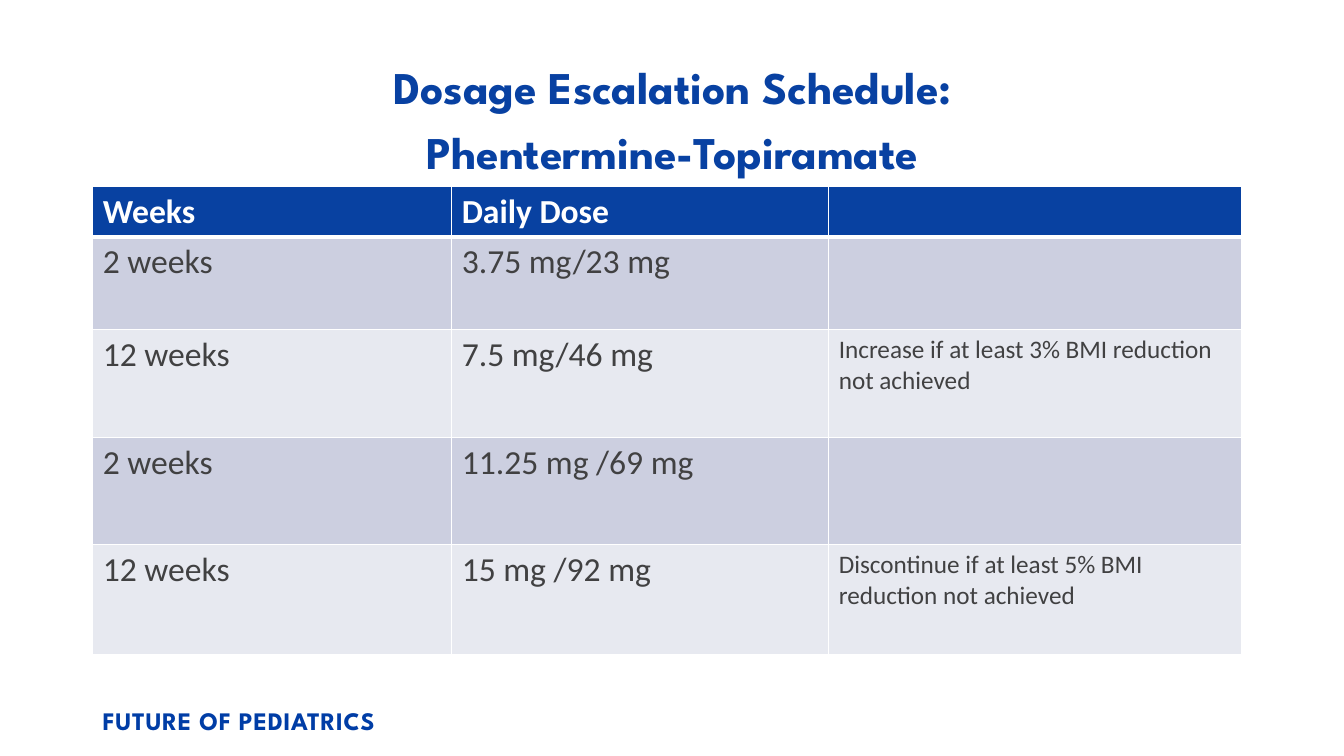
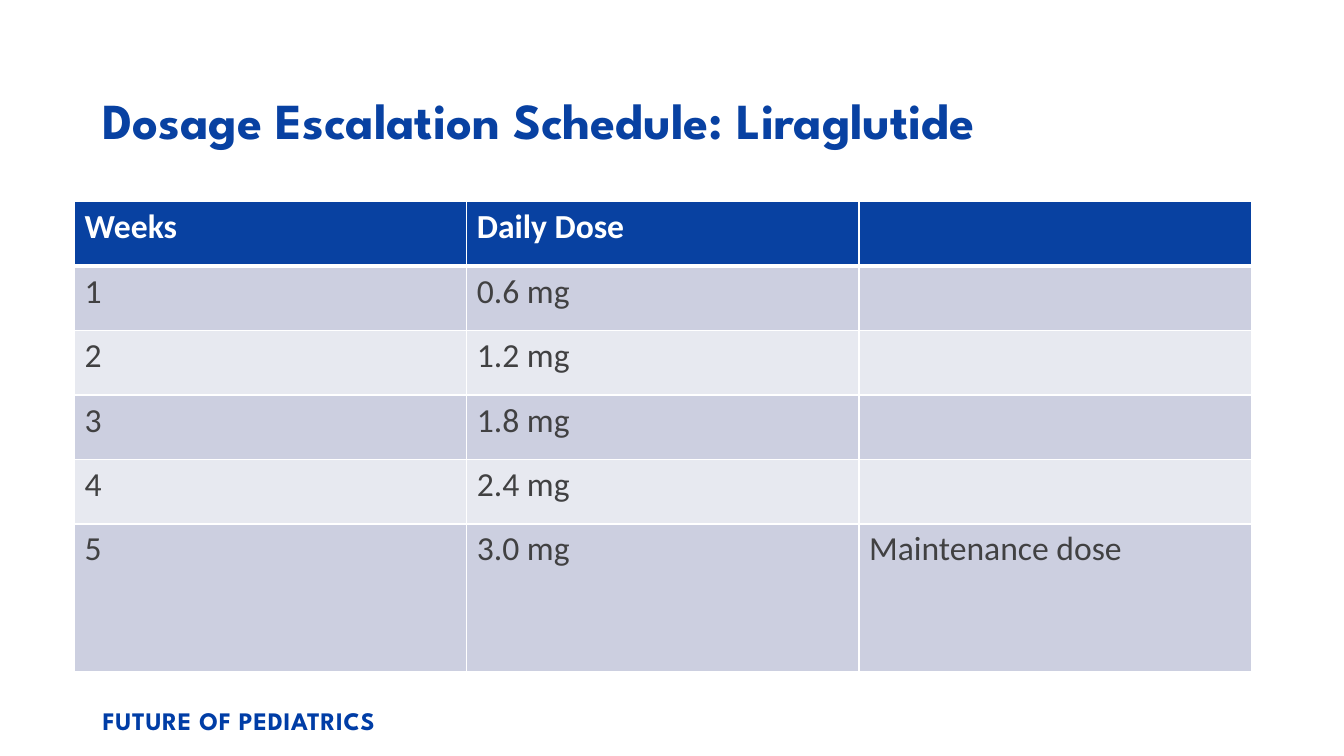
"""Build two dosage escalation schedule slides."""

from dataclasses import dataclass

from lxml.etree import SubElement
from pptx import Presentation
from pptx.dml.color import RGBColor
from pptx.enum.text import MSO_ANCHOR, MSO_AUTO_SIZE, PP_ALIGN
from pptx.oxml.ns import qn
from pptx.slide import Slide
from pptx.table import _Cell
from pptx.text.text import Font
from pptx.util import Inches, Pt


@dataclass(frozen=True)
class Theme:
    heading_font: str = "League Spartan"
    body_font: str = "Calibri"
    title_color: str = "0841A2"
    footer_color: str = "003DA6"
    header_fill: str = "0841A1"
    band_fills: tuple[str, str] = ("CCCFE0", "E7E9F0")
    body_color: str = "414142"
    white: str = "FFFFFF"
    cell_size: float = 24
    note_size: float = 18
    footer_size: float = 18
    footer_spacing: float = 0.5
    border: float = 1
    header_rule: float = 3


@dataclass(frozen=True)
class Schedule:
    title_lines: tuple[str, ...]
    title_size: float
    title_align: PP_ALIGN
    left: float
    top: float
    columns: tuple[float, ...]
    heights: tuple[float, ...]
    rows: tuple[tuple[str, str, str], ...]
    note_size: float


THEME = Theme()
HEADER = ("Weeks", "Daily Dose", "")
FOOTER = "FUTURE OF PEDIATRICS"
SCHEDULES = (
    Schedule(
        title_lines=("Dosage Escalation Schedule:", "Phentermine-Topiramate"),
        title_size=32.4,
        title_align=PP_ALIGN.CENTER,
        left=0.92,
        top=1.85,
        columns=(3.56, 3.74, 4.09),
        heights=(0.5, 0.92, 1.07, 1.06, 1.09),
        rows=(
            ("2 weeks", "3.75 mg/23 mg", ""),
            ("12 weeks", "7.5 mg/46 mg", "Increase if at least 3% BMI reduction not achieved"),
            ("2 weeks", "11.25 mg /69 mg", ""),
            ("12 weeks", "15 mg /92 mg", "Discontinue if at least 5% BMI reduction not achieved"),
        ),
        note_size=THEME.note_size,
    ),
    Schedule(
        title_lines=("Dosage Escalation Schedule: Liraglutide",),
        title_size=36,
        title_align=PP_ALIGN.LEFT,
        left=0.74,
        top=2,
        columns=(3.89,) * 3,
        heights=(0.64,) * 5 + (1.46,),
        rows=(
            ("1", "0.6 mg", ""),
            ("2", "1.2 mg", ""),
            ("3", "1.8 mg", ""),
            ("4", "2.4 mg", ""),
            ("5", "3.0 mg", "Maintenance dose"),
        ),
        note_size=THEME.cell_size,
    ),
)


def style_font(font: Font, name: str, size: float, color: str, bold: bool) -> None:
    font.name = name
    font.size = Pt(size)
    font.bold = bold
    font.color.rgb = RGBColor.from_string(color)


def add_title(page: Slide, schedule: Schedule) -> None:
    box = page.shapes.add_textbox(Inches(0.92), Inches(0.4), Inches(11.5), Inches(1.45))
    frame = box.text_frame
    frame.word_wrap = True
    frame.vertical_anchor = MSO_ANCHOR.MIDDLE
    para = frame.paragraphs[0]
    para.alignment = schedule.title_align
    para.line_spacing = 1.2
    for index, line in enumerate(schedule.title_lines):
        if index:
            para.add_line_break()
        span = para.add_run()
        span.text = line
        style_font(span.font, THEME.heading_font, schedule.title_size, THEME.title_color, True)


def add_footer(page: Slide) -> None:
    box = page.shapes.add_textbox(Inches(0.92), Inches(6.95), Inches(3), Inches(0.4))
    frame = box.text_frame
    frame.word_wrap = True
    frame.auto_size = MSO_AUTO_SIZE.SHAPE_TO_FIT_TEXT
    span = frame.paragraphs[0].add_run()
    span.text = FOOTER
    style_font(span.font, THEME.heading_font, THEME.footer_size, THEME.footer_color, True)
    span.font._element.set("spc", str(round(THEME.footer_spacing * 100)))


def set_borders(cell: _Cell, top: float, bottom: float) -> None:
    properties = cell._tc.get_or_add_tcPr()
    widths = {"lnL": THEME.border, "lnR": THEME.border, "lnT": top, "lnB": bottom}
    for side, width in widths.items():
        line = SubElement(properties, qn(f"a:{side}"), w=str(Pt(width)))
        fill = SubElement(line, qn("a:solidFill"))
        SubElement(fill, qn("a:srgbClr"), val=THEME.white)


def fill_cell(cell: _Cell, text: str, row: int, size: float) -> None:
    is_header = row == 0
    set_borders(
        cell,
        top=THEME.header_rule if row == 1 else THEME.border,
        bottom=THEME.header_rule if is_header else THEME.border,
    )
    cell.fill.solid()
    background = THEME.header_fill if is_header else THEME.band_fills[(row - 1) % 2]
    cell.fill.fore_color.rgb = RGBColor.from_string(background)
    if text:
        span = cell.text_frame.paragraphs[0].add_run()
        span.text = text
        color = THEME.white if is_header else THEME.body_color
        style_font(span.font, THEME.body_font, size, color, is_header)


def add_schedule_table(page: Slide, schedule: Schedule) -> None:
    rows = (HEADER, *schedule.rows)
    table = page.shapes.add_table(
        len(rows), len(HEADER),
        Inches(schedule.left), Inches(schedule.top),
        Inches(sum(schedule.columns)), Inches(sum(schedule.heights)),
    ).table
    for column, width in zip(table.columns, schedule.columns):
        column.width = Inches(width)
    for row, (texts, height) in enumerate(zip(rows, schedule.heights)):
        table.rows[row].height = Inches(height)
        for column, text in enumerate(texts):
            size = schedule.note_size if column == 2 else THEME.cell_size
            fill_cell(table.cell(row, column), text, row, size)


def main() -> None:
    deck = Presentation()
    deck.slide_width = Inches(13.33)
    deck.slide_height = Inches(7.5)
    for schedule in SCHEDULES:
        page = deck.slides.add_slide(deck.slide_layouts[6])
        add_footer(page)
        add_title(page, schedule)
        add_schedule_table(page, schedule)
    deck.save("out.pptx")


if __name__ == "__main__":
    main()
